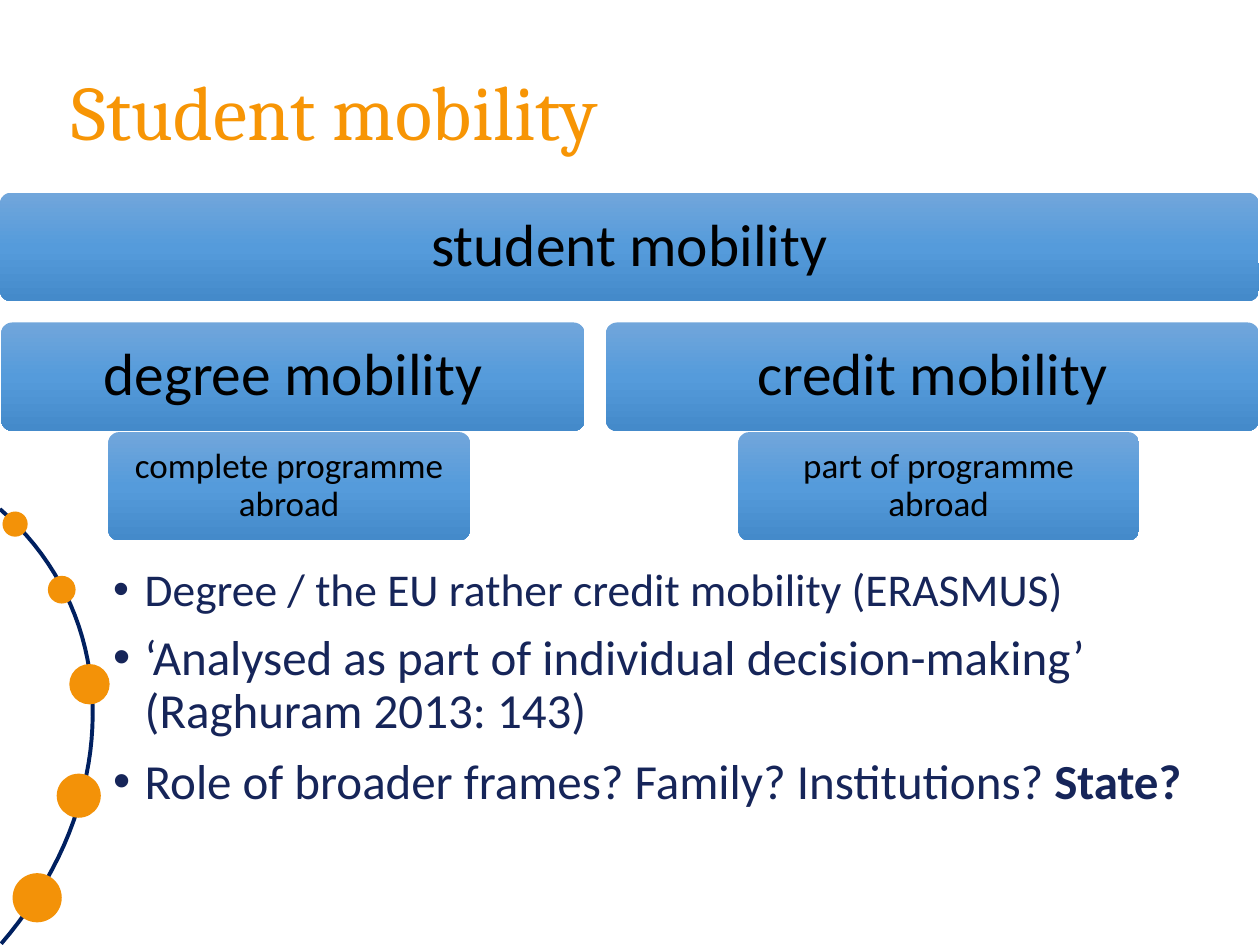
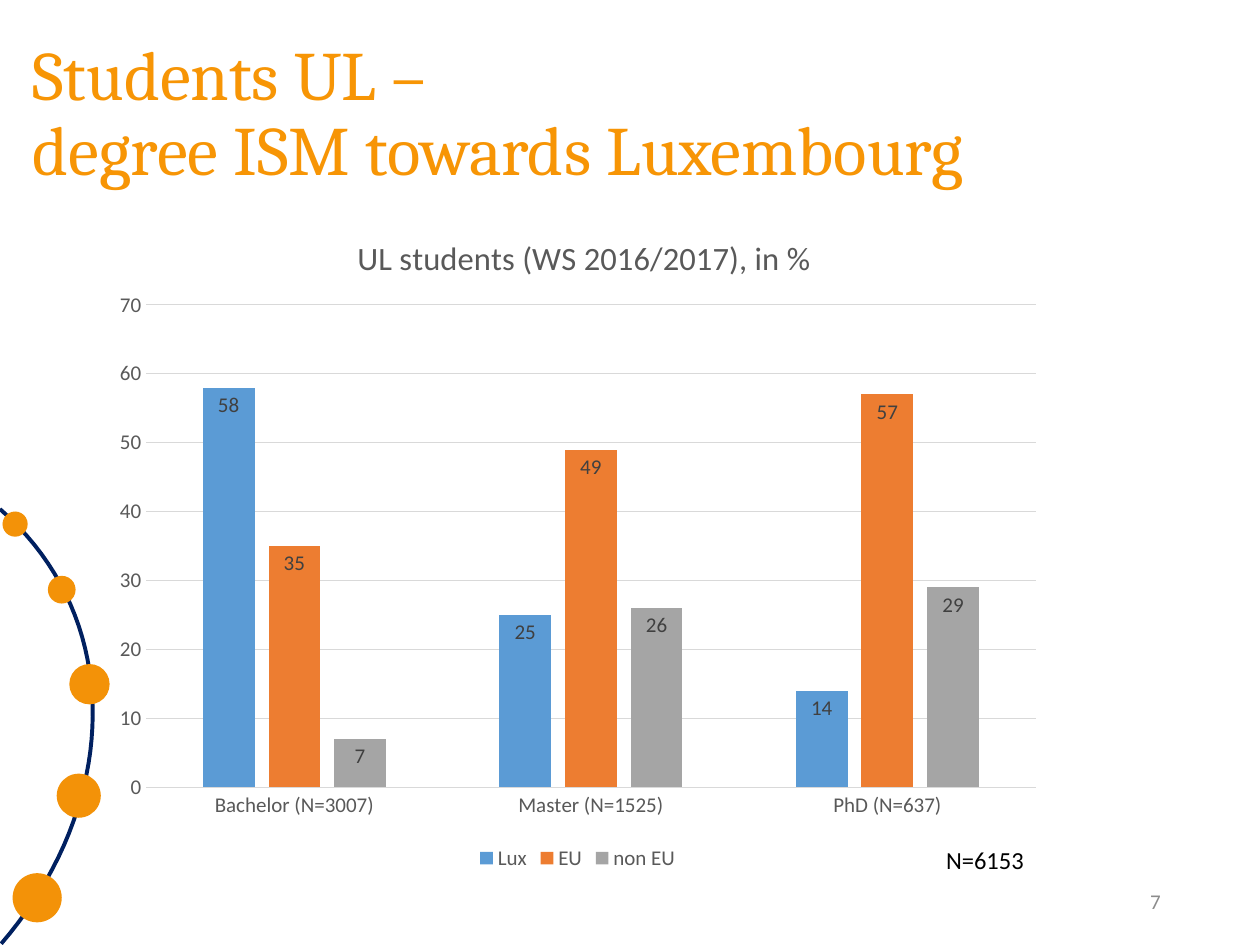
from copy import deepcopy

from lxml import etree
from pptx import Presentation
from pptx.chart.data import CategoryChartData
from pptx.dml.color import RGBColor
from pptx.enum.chart import XL_CHART_TYPE, XL_LABEL_POSITION, XL_LEGEND_POSITION, XL_TICK_MARK
from pptx.enum.shapes import MSO_SHAPE
from pptx.enum.text import MSO_ANCHOR, PP_ALIGN
from pptx.oxml.ns import qn
from pptx.util import Pt

PX = 9144  # 100 px to the inch
COLUMNS = XL_CHART_TYPE.COLUMN_CLUSTERED
INSIDE_END = XL_LABEL_POSITION.INSIDE_END
BOTTOM = XL_LEGEND_POSITION.BOTTOM
NO_TICK = XL_TICK_MARK.NONE
OVAL, ROUNDED = MSO_SHAPE.OVAL, MSO_SHAPE.ROUNDED_RECTANGLE
TOP, MIDDLE = MSO_ANCHOR.TOP, MSO_ANCHOR.MIDDLE
LEFT, CENTER, RIGHT = PP_ALIGN.LEFT, PP_ALIGN.CENTER, PP_ALIGN.RIGHT

HEADING_FONT, BODY_FONT = "Cambria", "Calibri"
AMBER = RGBColor(0xF7, 0x95, 0x05)
DOT_ORANGE = RGBColor(0xF3, 0x92, 0x08)
ARC_NAVY = RGBColor(0x00, 0x20, 0x60)
TEXT_NAVY = RGBColor(0x16, 0x25, 0x59)
BLACK = RGBColor(0x00, 0x00, 0x00)
PAGE_GREY = RGBColor(0x8C, 0x8C, 0x8C)
AXIS_GREY = RGBColor(0x59, 0x59, 0x59)
LABEL_GREY = RGBColor(0x40, 0x40, 0x40)
GRID_GREY = RGBColor(0xD9, 0xD9, 0xD9)
BLOCK_STOPS = [
    (0, RGBColor(0x71, 0xA6, 0xDB)),
    (0.5, RGBColor(0x55, 0x9B, 0xDB)),
    (1, RGBColor(0x44, 0x8A, 0xCA)),
]


def set_font(font, size, color, name=BODY_FONT):
    font.size, font.name = Pt(size), name
    font.color.rgb = color


def add_text(slide, box, text, size, color, name=BODY_FONT, anchor=TOP, align=LEFT, spacing=1.0):
    tf = slide.shapes.add_textbox(*[v * PX for v in box]).text_frame
    tf.word_wrap = True
    tf.vertical_anchor = anchor
    tf.text = text
    p = tf.paragraphs[0]
    p.alignment, p.line_spacing = align, spacing
    for r in p.runs:
        set_font(r.font, size, color, name)


prs = Presentation()
prs.slide_width, prs.slide_height = 1000 * PX, 750 * PX

# Shared frame: arc with dots on the left edge, and the title
ARC = [(0, 404), (101, 492), (95, 640), (1, 749)]  # cubic curve
DOTS = [(2, 406, 20), (38, 457, 22), (55, 527, 32), (45, 614, 35), (10, 693, 39)]
TITLES = [
    ("Student mobility", 44, (47, 29, 900, 125)),
    ("Students UL –\vdegree ISM towards Luxembourg", 39.6, (16, 29, 967, 125)),
]
STEPS = 40
arc_points = []
for i in range(STEPS + 1):
    t = i / STEPS
    weights = ((1 - t) ** 3, 3 * t * (1 - t) ** 2, 3 * t * t * (1 - t), t ** 3)
    arc_points.append([round(PX * sum(w * pt[k] for w, pt in zip(weights, ARC))) for k in (0, 1)])

for title, size, box in TITLES:
    slide = prs.slides.add_slide(prs.slide_layouts[6])
    builder = slide.shapes.build_freeform(*arc_points[0], scale=1.0)
    builder.add_line_segments(arc_points[1:], close=False)
    s = builder.convert_to_shape()
    s.shadow.inherit = False
    s.fill.background()
    s.line.color.rgb, s.line.width = ARC_NAVY, Pt(2.25)
    for x, y, d in DOTS:
        s = slide.shapes.add_shape(OVAL, x * PX, y * PX, d * PX, d * PX)
        s.shadow.inherit = False
        s.fill.solid()
        s.fill.fore_color.rgb = DOT_ORANGE
        s.line.fill.background()
    add_text(slide, box, title, size, AMBER, HEADING_FONT, MIDDLE, spacing=0.9)

mobility, students = prs.slides

# Slide 1: hierarchy of mobility types
BLOCK_H = 86
BLOCKS = [
    ("student mobility", 0, 153, 999, 34, 16),
    ("degree mobility", 1, 256, 463, 34, 16),
    ("credit mobility", 481, 256, 518, 34, 16),
    ("complete programme abroad", 86, 343, 287, 20, 10),
    ("part of programme abroad", 586, 343, 318, 20, 10),
]
for text, x, y, w, size, inset in BLOCKS:
    s = mobility.shapes.add_shape(ROUNDED, x * PX, y * PX, w * PX, BLOCK_H * PX)
    s.adjustments[0] = 0.1
    s.shadow.inherit = False
    s.line.fill.background()
    s.fill.gradient()
    s.fill.gradient_angle = 270
    stops = s._element.spPr.find(".//" + qn("a:gsLst"))
    stops.append(deepcopy(stops[0]))
    for stop, (position, color) in zip(s.fill.gradient_stops, BLOCK_STOPS):
        stop.position, stop.color.rgb = position, color
    tf = s.text_frame
    tf.word_wrap = True
    tf.vertical_anchor = MIDDLE
    tf.margin_left = tf.margin_right = tf.margin_top = tf.margin_bottom = inset * PX
    tf.text = text
    p = tf.paragraphs[0]
    p.alignment, p.line_spacing = CENTER, 0.9
    set_font(p.runs[0].font, size, BLACK)

# Slide 1: bullets, each with its plain text, bold ending and size
BULLETS = [
    ("Degree / the EU rather credit mobility (ERASMUS)", "", 26),
    ("‘Analysed as part of individual decision-making’ (Raghuram 2013: 143)", "", 28),
    ("Role of broader frames? Family? Institutions? ", "State?", 28),
]
tf = mobility.shapes.add_textbox(80 * PX, 445 * PX, 901 * PX, 223 * PX).text_frame
tf.word_wrap = True
for i, (plain, bold, size) in enumerate(BULLETS):
    p = tf.add_paragraph() if i else tf.paragraphs[0]
    p.text = plain
    p.line_spacing = 0.9
    if i:
        p.space_before = Pt(10)
    if bold:
        r = p.add_run()
        r.text = bold
        r.font.bold = True
    for r in p.runs:
        set_font(r.font, size, TEXT_NAVY)
    pPr = p._p.get_or_add_pPr()
    pPr.set("marL", str(25 * PX))
    pPr.set("indent", str(-25 * PX))
    etree.SubElement(pPr, qn("a:buFont")).set("typeface", "Arial")
    etree.SubElement(pPr, qn("a:buChar")).set("char", "•")

# Slide 2: page number
add_text(students, (706, 695, 225, 40), "7", 12, PAGE_GREY, anchor=MIDDLE, align=RIGHT)

# Slide 2: column chart
CHART = (80, 158, 757, 537)
SERIES = [
    ("Lux", (58, 25, 14), RGBColor(0x5B, 0x9B, 0xD5)),
    ("EU", (35, 49, 57), RGBColor(0xED, 0x7D, 0x31)),
    ("non EU", (7, 26, 29), RGBColor(0xA5, 0xA5, 0xA5)),
]
data = CategoryChartData()
data.categories = ["Bachelor (N=3007)", "Master (N=1525)", "PhD (N=637)"]
for name, values, color in SERIES:
    data.add_series(name, values)
chart = students.shapes.add_chart(COLUMNS, *[v * PX for v in CHART], data).chart
set_font(chart.font, 10, BLACK)

chart.has_title = True
tf = chart.chart_title.text_frame
tf.text = "UL students (WS 2016/2017), in %"
set_font(tf.paragraphs[0].runs[0].font, 18.6, AXIS_GREY)
tf.paragraphs[0].runs[0].font.bold = False
chart.chart_title.include_in_layout = False

chart.has_legend = True
chart.legend.position = BOTTOM
chart.legend.include_in_layout = False
set_font(chart.legend.font, 12, AXIS_GREY)

for axis in (chart.category_axis, chart.value_axis):
    axis.major_tick_mark = axis.minor_tick_mark = NO_TICK
    set_font(axis.tick_labels.font, 12, AXIS_GREY)
line = chart.category_axis.format.line
line.color.rgb, line.width = GRID_GREY, Pt(0.75)
axis = chart.value_axis
axis.format.line.fill.background()
axis.minimum_scale, axis.maximum_scale, axis.major_unit = 0, 70, 10
line = axis.major_gridlines.format.line
line.color.rgb, line.width = GRID_GREY, Pt(0.75)

plot = chart.plots[0]
plot.gap_width, plot.overlap, plot.vary_by_categories = 219, -27, False
for series, (name, values, color) in zip(plot.series, SERIES):
    series.format.fill.solid()
    series.format.fill.fore_color.rgb = color
    labels = series.data_labels
    labels.show_value, labels.position = True, INSIDE_END
    set_font(labels.font, 12, LABEL_GREY)

# Slide 2: fixed places for the chart title and the plot area
plot_area = chart._chartSpace.chart.plotArea
for layout in plot_area.findall(qn("c:layout")):
    plot_area.remove(layout)
title = chart.chart_title._element
for layout in title.findall(qn("c:layout")):
    title.remove(layout)
PLACES = [
    (plot_area, 0, [("layoutTarget", "inner")], (116, 242, 706, 383)),
    (title, 1, [], (279, 182)),
]
for parent, index, settings, place in PLACES:
    layout = etree.Element(qn("c:layout"))
    manual = etree.SubElement(layout, qn("c:manualLayout"))
    x, y = place[:2]
    settings = settings + [("xMode", "edge"), ("yMode", "edge")]
    fractions = [(x - CHART[0]) / CHART[2], (y - CHART[1]) / CHART[3]]
    fractions += [v / total for v, total in zip(place[2:], CHART[2:])]
    for tag, value in settings + list(zip("xywh", fractions)):
        etree.SubElement(manual, qn("c:" + tag)).set("val", str(value))
    parent.insert(index, layout)

# Slide 2: sample size
add_text(students, (741, 666, 92, 34), "N=6153", 14, BLACK)

prs.save("out.pptx")
